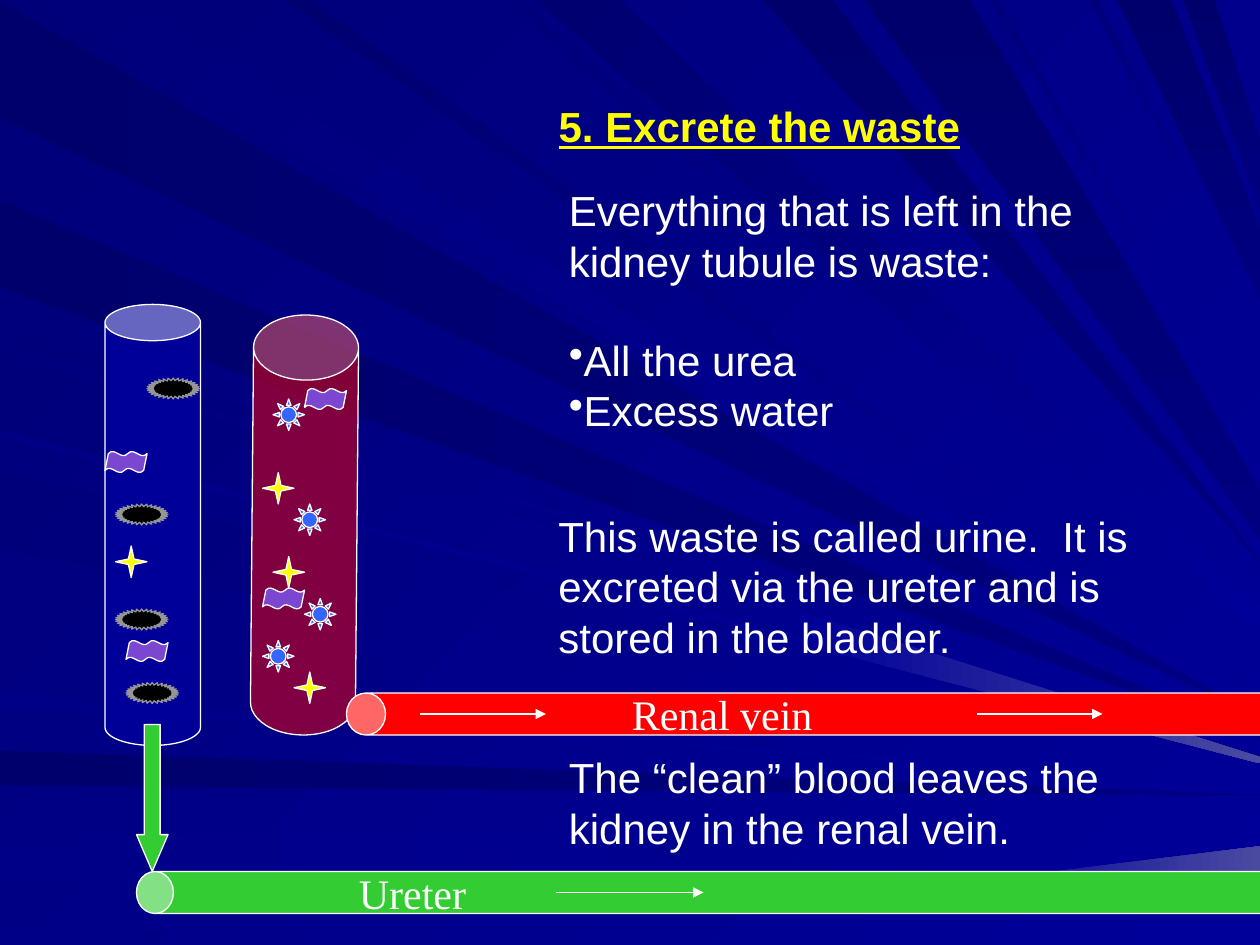
"""Build the kidney slide on excreting the waste."""
from dataclasses import dataclass

from lxml import etree
from pptx import Presentation
from pptx import util as u
from pptx.dml.color import RGBColor
from pptx.enum import shapes, text
from pptx.oxml import ns

PX = 7620
WIDTH, HEIGHT = 1200, 900
SHAPE = shapes.MSO_SHAPE


@dataclass(frozen=True)
class Theme:
    """Colours, fonts and sizes in points."""
    background: tuple = ("000078", "000099")
    shade: tuple = ("00006C", "000080")
    deep: tuple = ("000070", "000099")
    middle: tuple = ("00007B", "000099")
    pale: tuple = ("000087", "000099")
    glint: tuple = ("000099", "4A4AA1")
    white: str = "FFFFFF"
    heading: str = "FFFF00"
    tubule: str = "000099"
    blood: str = "FF0000"
    urine: str = "33CC33"
    salt: str = "FFFF00"
    protein: str = "7B46D0"
    urea: str = "000000"
    urea_edge: str = "969696"
    glucose: str = "3366FF"
    sans: str = "Arial"
    serif: str = "Times New Roman"
    size: int = 24
    line: float = 0.75


THEME = Theme()

LEFT_RAYS = [
    (THEME.shade, 0, [(2, 112, 684), (191, 274, 702), (715, 748, 757)]),
    (THEME.pale, 0, [(798, 845, 776), (882, 900, 794), (662, 672, 746), (340, 416, 724)]),
    (THEME.middle, 45, [(310, 324, 706), (334, 410, 718), (449, 524, 727)]),
]
TOP_RAYS = [
    (THEME.middle, 45, [(31, 121, 675), (478, 499, 622), (942, 950, 430), (1038, 1046, 305)]),
    (THEME.deep, 45, [(511, 590, 590, 33), (270, 296, 660)]),
    (THEME.shade, 90, [(727, 793, 535), (823, 924, 490, 46), (1064, 1116, 252, 64),
                       (1127, 1157, 168, 63)]),
]


def paint(fill, start, end=None, angle=0):
    """Fill with one colour, or with a gradient at a clockwise angle."""
    if end is None:
        fill.solid()
        fill.fore_color.rgb = RGBColor.from_string(start)
        return
    fill.gradient()
    fill.gradient_angle = (360 - angle) % 360
    for stop, colour in zip(fill.gradient_stops, (start, end)):
        stop.color.rgb = RGBColor.from_string(colour)


def add_ray(slide, near, far, tip, spread, colours, angle):
    """Add a ray from two points to its tip on the right edge."""
    builder = slide.shapes.build_freeform(*near, scale=PX)
    ends = [(WIDTH, tip + spread / 2), (WIDTH, tip - spread / 2)]
    builder.add_line_segments([*ends, far], close=True)
    ray = builder.convert_to_shape()
    ray.shadow.inherit = False
    paint(ray.fill, *colours, angle)
    ray.line.fill.background()


def add_rays(slide):
    """Add the rays from the left and top edges, then the two glints."""
    for groups, from_left in ((LEFT_RAYS, True), (TOP_RAYS, False)):
        for colours, angle, rays in groups:
            for near, far, tip, *spread in rays:
                if from_left:
                    start, stop = (0, far), (0, near)
                else:
                    start, stop = (near, 0), (far, 0)
                add_ray(slide, start, stop, tip, sum(spread), colours, angle)
    add_ray(slide, (762, 613), (762, 582), 724, 6, THEME.glint, 0)
    add_ray(slide, (907, 842), (907, 842), 820, 28, THEME.glint, 0)


def add_figure(slide, kind, box, fill, adjust, edge=THEME.white, rotation=0, opacity=None):
    """Add an outlined preset shape."""
    shape = slide.shapes.add_shape(kind, *(n * PX for n in box))
    shape.shadow.inherit = False
    shape.rotation = rotation
    for index, value in enumerate(adjust):
        shape.adjustments[index] = value
    paint(shape.fill, fill)
    if opacity is not None:
        colour = shape.fill._xPr.find(".//" + ns.qn("a:srgbClr"))
        etree.SubElement(colour, ns.qn("a:alpha"), val=str(opacity * 1000))
    shape.line.color.rgb = RGBColor.from_string(edge)
    shape.line.width = u.Pt(THEME.line)


def add_particles(slide, kind, places, size, fill, adjust, edge=THEME.white):
    """Add one kind of particle at each place."""
    for place in places:
        add_figure(slide, kind, place + size, fill, adjust, edge)


def add_arrow(slide, left, right, y):
    """Add a horizontal flow arrow."""
    arrow = slide.shapes.add_connector(
        shapes.MSO_CONNECTOR.STRAIGHT, left * PX, y * PX, right * PX, y * PX)
    arrow.line.color.rgb = RGBColor.from_string(THEME.white)
    arrow.line.width = u.Pt(THEME.line)
    etree.SubElement(arrow.line._get_or_add_ln(), ns.qn("a:tailEnd"), type="triangle")
    etree.SubElement(arrow._element.spPr, ns.qn("a:effectLst"))


def write(slide, words, box, font=THEME.sans, colour=THEME.white, strong=False,
          bullets=(), gap=0, wrap=True, shape=None):
    """Write a paragraph and any bullets in a text box or a given shape."""
    left, top, width, height = (n * PX for n in box)
    shape = shape or slide.shapes.add_textbox(left, top, width, height)
    shape.left, shape.top, shape.width, shape.height = left, top, width, height
    frame = shape.text_frame
    frame.word_wrap = wrap
    frame.auto_size = text.MSO_AUTO_SIZE.NONE
    frame.vertical_anchor = text.MSO_ANCHOR.TOP
    for index, line in enumerate((words, *bullets)):
        paragraph = frame.add_paragraph() if index else frame.paragraphs[0]
        paragraph.alignment = text.PP_ALIGN.LEFT
        paragraph.space_before = u.Pt(gap if index == 1 else 0)
        if index:
            etree.SubElement(paragraph._p.get_or_add_pPr(), ns.qn("a:buChar"), char="•")
        run = paragraph.add_run()
        run.text = line
        run.font.name = font
        run.font.size = u.Pt(THEME.size)
        run.font.bold = run.font.underline = strong
        run.font.color.rgb = RGBColor.from_string(colour)


def main():
    """Build and save the slide."""
    presentation = Presentation()
    presentation.slide_width, presentation.slide_height = WIDTH * PX, HEIGHT * PX
    slide = presentation.slides.add_slide(presentation.slide_layouts[5])
    paint(slide.background.fill, *THEME.background, 45)
    add_rays(slide)

    add_figure(slide, SHAPE.CAN, (100, 290, 91, 420), THEME.tubule, [0.38])
    add_figure(slide, SHAPE.CAN, (240, 300, 100, 400), THEME.blood, [0.62],
               rotation=0.5, opacity=50)
    add_particles(slide, SHAPE.STAR_4_POINT, [(110, 520), (250, 450), (260, 530), (280, 640)],
                  (30, 30), THEME.salt, [0.125])
    add_particles(slide, SHAPE.DOUBLE_WAVE, [(120, 610), (100, 430), (250, 560), (290, 370)],
                  (40, 20), THEME.protein, [0.1, -0.04])
    add_particles(slide, SHAPE.STAR_32_POINT, [(110, 580), (120, 650), (110, 480), (140, 360)],
                  (50, 20), THEME.urea, [0.375], THEME.urea_edge)
    add_particles(slide, SHAPE.SUN, [(260, 380), (280, 480), (250, 610), (290, 570)],
                  (30, 30), THEME.glucose, [0.25])

    title = slide.shapes.title
    slide.shapes._spTree.append(title._element)
    write(slide, "5. Excrete the waste", (520, 90, 610, 60), colour=THEME.heading,
          strong=True, shape=title)
    write(slide, "Everything that is left in the kidney tubule is waste:",
          (530, 170, 610, 497), bullets=("All the urea", "Excess water"), gap=28)
    add_figure(slide, SHAPE.DOWN_ARROW, (130, 690, 30, 140), THEME.urine, [0.5, 1.17])
    write(slide, "This waste is called urine.  It is excreted via the ureter "
          "and is stored in the bladder.", (520, 480, 622, 157))
    write(slide, "The “clean” blood leaves the kidney in the renal vein.",
          (530, 710, 622, 109))

    add_figure(slide, SHAPE.CAN, (770, 220, 40, 920), THEME.blood, [0.93], rotation=270)
    write(slide, "Renal vein", (590, 650, 250, 60), font=THEME.serif)
    add_arrow(slide, 400, 520, 680)
    add_arrow(slide, 930, 1050, 680)

    add_figure(slide, SHAPE.CAN, (655, 305, 40, 1090), THEME.urine, [0.88], rotation=270)
    write(slide, "Ureter", (330, 820, 126, 60), font=THEME.serif, wrap=False)
    add_arrow(slide, 530, 670, 850)

    presentation.save("out.pptx")


if __name__ == "__main__":
    main()
